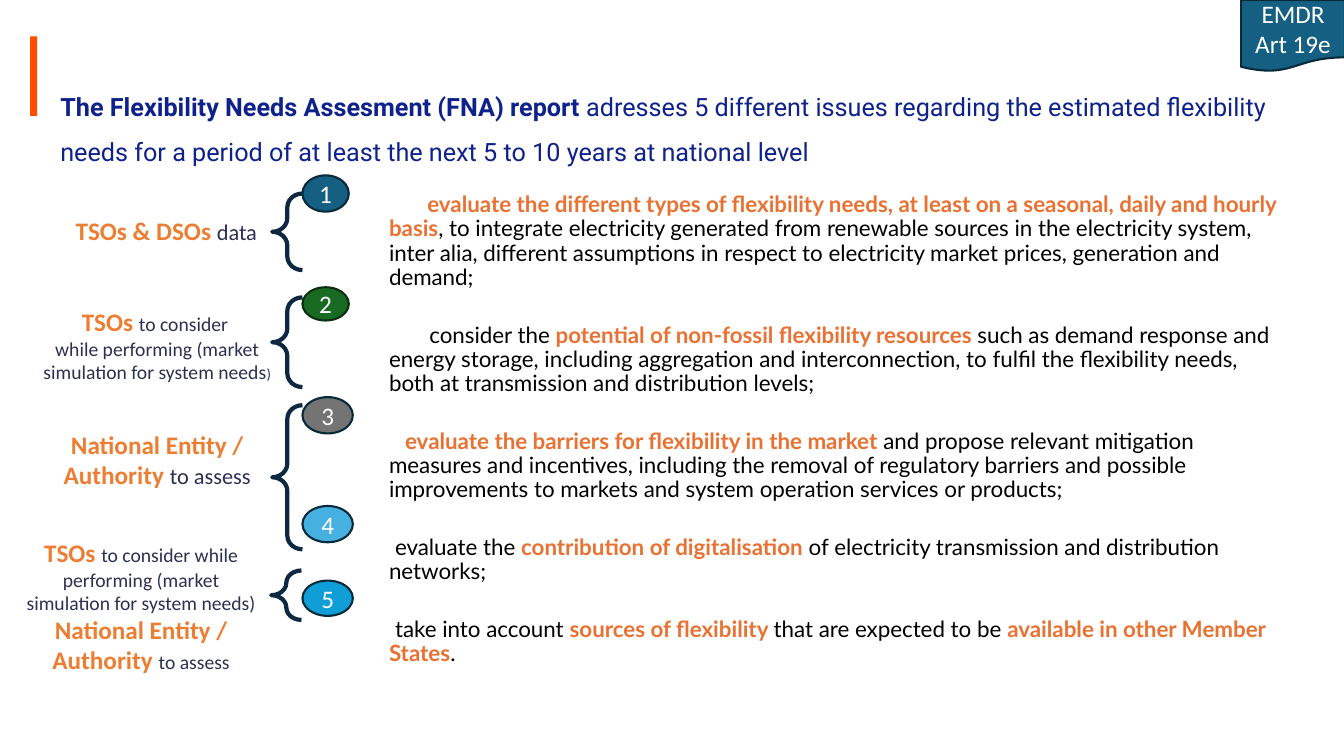
from pptx import Presentation
from pptx.dml.color import RGBColor
from pptx.enum.shapes import MSO_SHAPE
from pptx.enum.text import MSO_ANCHOR, PP_ALIGN
from pptx.util import Emu, Pt

PX = 9144  # 100 px to the inch
COLORS = {
    "accent": "FF4D00", "title": "0F218B", "highlight": "E97132", "body": "000000",
    "actor": "ED7D31", "note": "2C3051", "brace": "0E2841", "white": "FFFFFF",
    "teal": "156082", "green": "196B24", "gray": "747474", "sky": "46B1E1",
    "blue": "0F9ED5", "outline": "092A39", "green_outline": "0B2F10",
}

# First-line indent, then (text, highlighted) pieces
ISSUES = [
    (38, [("evaluate the different types of flexibility needs, at least on a seasonal, "
           "daily and hourly basis", True),
          (", to integrate electricity generated from renewable sources in the electricity "
           "system, inter alia, different assumptions in respect to electricity market "
           "prices, generation and demand;", False)]),
    (40, [("consider the ", False),
          ("potential of non-fossil flexibility resources ", True),
          ("such as demand response and energy storage, including aggregation and "
           "interconnection, to fulfil the flexibility needs, both at transmission and "
           "distribution levels;", False)]),
    (16, [("evaluate the barriers for flexibility in the market ", True),
          ("and propose relevant mitigation measures and incentives, including the removal "
           "of regulatory barriers and possible improvements to markets and system "
           "operation services or products;", False)]),
    (6, [("evaluate the ", False), ("contribution of digitalisation", True),
         (" of electricity transmission and distribution networks;", False)]),
    (6, [("take into account ", False), ("sources of flexibility ", True),
         ("that are expected to be ", False),
         ("available in other Member States", True), (".", False)]),
]

# Box, then paragraphs of (actor, [(note, size), ...])
ACTORS = [
    ((35, 209, 260, 40), [("TSOs & DSOs ", [("data", 16)])]),
    ((26, 299, 260, 88), [("TSOs ", [
        ("to consider \vwhile performing (market simulation for system needs", 14),
        (")", 10.5)])]),
    ((26, 421, 260, 71), [("National Entity / Authority ", [("to assess", 16)])]),
    ((10, 528, 260, 148), [
        ("TSOs ", [("to consider while performing (market simulation for system needs)", 14)]),
        ("National Entity / Authority ", [("to assess", 14)])]),
]

BRACES = [(270, 192, 30, 76, 0.453), (270, 295, 30, 89, 0.453),
          (270, 402, 30, 143, 0.453), (269, 566, 30, 49, 0.404)]

# Top, width, height, fill, outline
NUMBERS = [
    (174, 46, 36, "teal", "outline"),
    (285, 46, 33, "green", "green_outline"),
    (394, 50, 36, "gray", "outline"),
    (502, 50, 36, "sky", "outline"),
    (576, 50, 35, "blue", "outline"),
]


def px(*lengths):
    return [Emu(length * PX) for length in lengths]


def rgb(name):
    return RGBColor.from_string(COLORS[name])


def add_text(paragraph, text, *, size, color, font="Calibri", bold=False):
    """Append text to the paragraph; a vertical tab breaks the line."""
    for number, line in enumerate(text.split("\v")):
        if number:
            paragraph.add_line_break()
        run = paragraph.add_run()
        run.text = line
        run.font.name = font
        run.font.size = Pt(size)
        run.font.bold = bold
        run.font.color.rgb = rgb(color)


def add_paragraphs(frame, count, align=PP_ALIGN.LEFT):
    while len(frame.paragraphs) < count:
        frame.add_paragraph()
    for paragraph in frame.paragraphs:
        paragraph.alignment = align
    return frame.paragraphs


def add_text_box(slide, box):
    frame = slide.shapes.add_textbox(*px(*box)).text_frame
    frame.word_wrap = True
    return frame


def add_figure(slide, preset, box, fill=None, outline=None, weight=1.5):
    figure = slide.shapes.add_shape(preset, *px(*box))
    figure.shadow.inherit = False
    if fill:
        figure.fill.solid()
        figure.fill.fore_color.rgb = rgb(fill)
    else:
        figure.fill.background()
    if outline:
        figure.line.color.rgb = rgb(outline)
        figure.line.width = Pt(weight)
    else:
        figure.line.fill.background()
    return figure


def add_badge(slide, preset, box, lines, fill, outline):
    frame = add_figure(slide, preset, box, fill, outline).text_frame
    frame.margin_left = frame.margin_right = 0
    frame.vertical_anchor = MSO_ANCHOR.MIDDLE
    for paragraph, line in zip(add_paragraphs(frame, len(lines), PP_ALIGN.CENTER), lines):
        add_text(paragraph, line, size=18, color="white")


def add_title(slide):
    heading = add_text_box(slide, (50, 71, 1271, 39)).paragraphs[0]
    heading.line_spacing = Pt(32)
    style = {"size": 18, "color": "title", "font": "Roboto"}
    add_text(heading, "The Flexibility Needs Assesment (FNA) report ", bold=True, **style)
    add_text(heading, "adresses 5 different issues regarding the estimated flexibility needs "
             "for a period of at least the next 5 to 10 years at national level", **style)


def add_issues(slide):
    frame = add_text_box(slide, (376, 187, 908, 475))
    for number, (paragraph, (indent, pieces)) in enumerate(
            zip(add_paragraphs(frame, len(ISSUES)), ISSUES)):
        paragraph.line_spacing = 0.9
        paragraph.space_before = Pt(24 if number else 0)
        properties = paragraph._p.get_or_add_pPr()
        properties.set("marL", "0")
        properties.set("indent", str(indent * PX))
        for text, highlighted in pieces:
            add_text(paragraph, text, size=16, font="Lato", bold=highlighted,
                     color="highlight" if highlighted else "body")


def add_actor_label(slide, box, entries):
    frame = add_text_box(slide, box)
    paragraphs = add_paragraphs(frame, len(entries), PP_ALIGN.CENTER)
    for paragraph, (actor, notes) in zip(paragraphs, entries):
        add_text(paragraph, actor, size=18, color="actor", bold=True)
        for note, size in notes:
            add_text(paragraph, note, size=size, color="note")


def add_brace(slide, left, top, width, height, curl):
    brace = add_figure(slide, MSO_SHAPE.LEFT_BRACE, (left, top, width, height),
                       outline="brace", weight=3)
    brace.adjustments[0] = curl
    brace.adjustments[1] = 0.5


def main():
    presentation = Presentation()
    presentation.slide_width, presentation.slide_height = px(1333, 750)
    slide = presentation.slides.add_slide(presentation.slide_layouts[6])

    add_figure(slide, MSO_SHAPE.RECTANGLE, (30, 36, 7, 79), "accent")
    add_title(slide)
    add_issues(slide)
    for box, entries in ACTORS:
        add_actor_label(slide, box, entries)
    for brace in BRACES:
        add_brace(slide, *brace)
    add_badge(slide, MSO_SHAPE.FLOWCHART_DOCUMENT, (1231, 0, 103, 71),
              ["EMDR", "Art 19e"], "teal", "outline")
    for number, (top, width, height, fill, outline) in enumerate(NUMBERS, 1):
        add_badge(slide, MSO_SHAPE.FLOWCHART_CONNECTOR, (300, top, width, height),
                  [str(number)], fill, outline)

    presentation.save("out.pptx")


if __name__ == "__main__":
    main()
